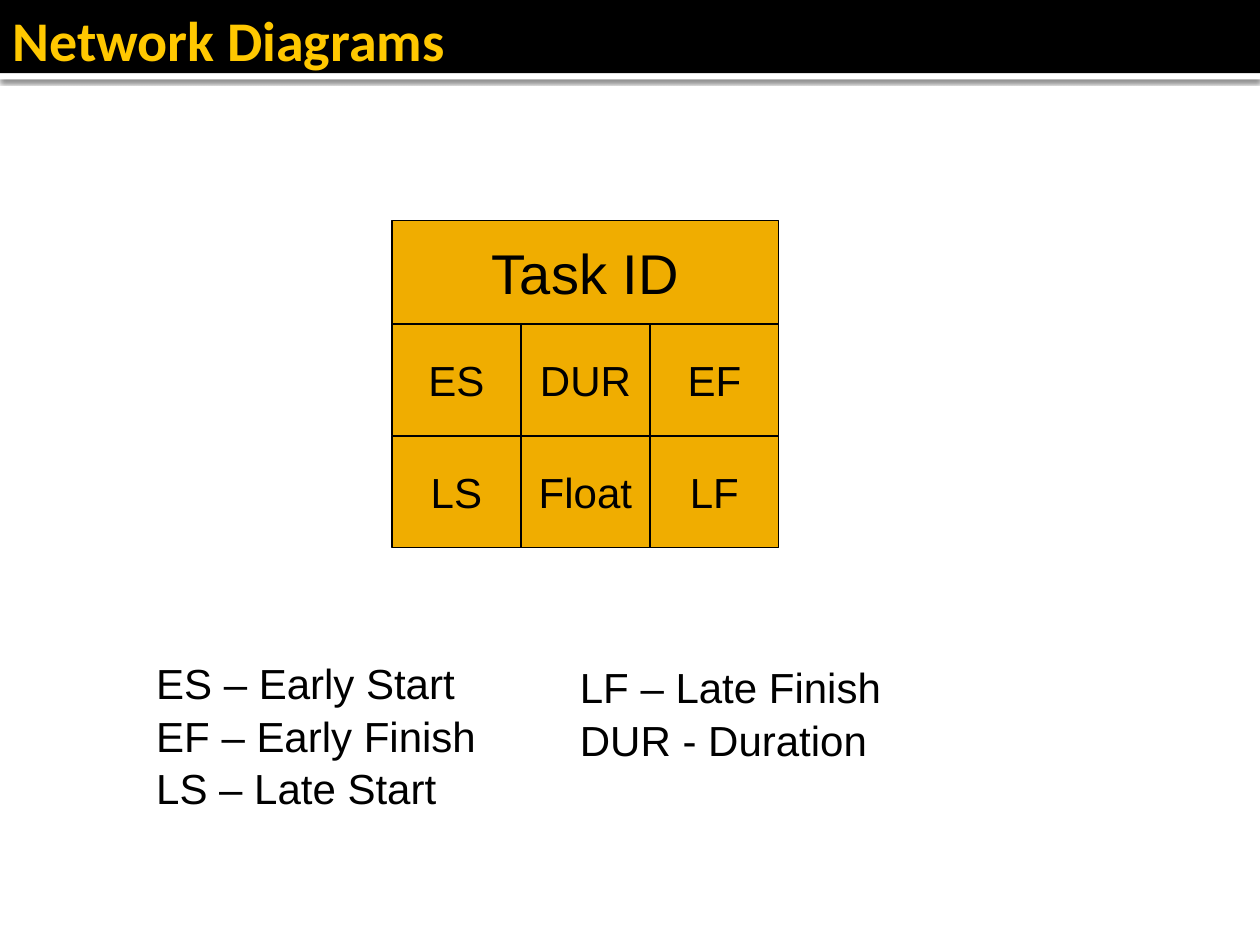
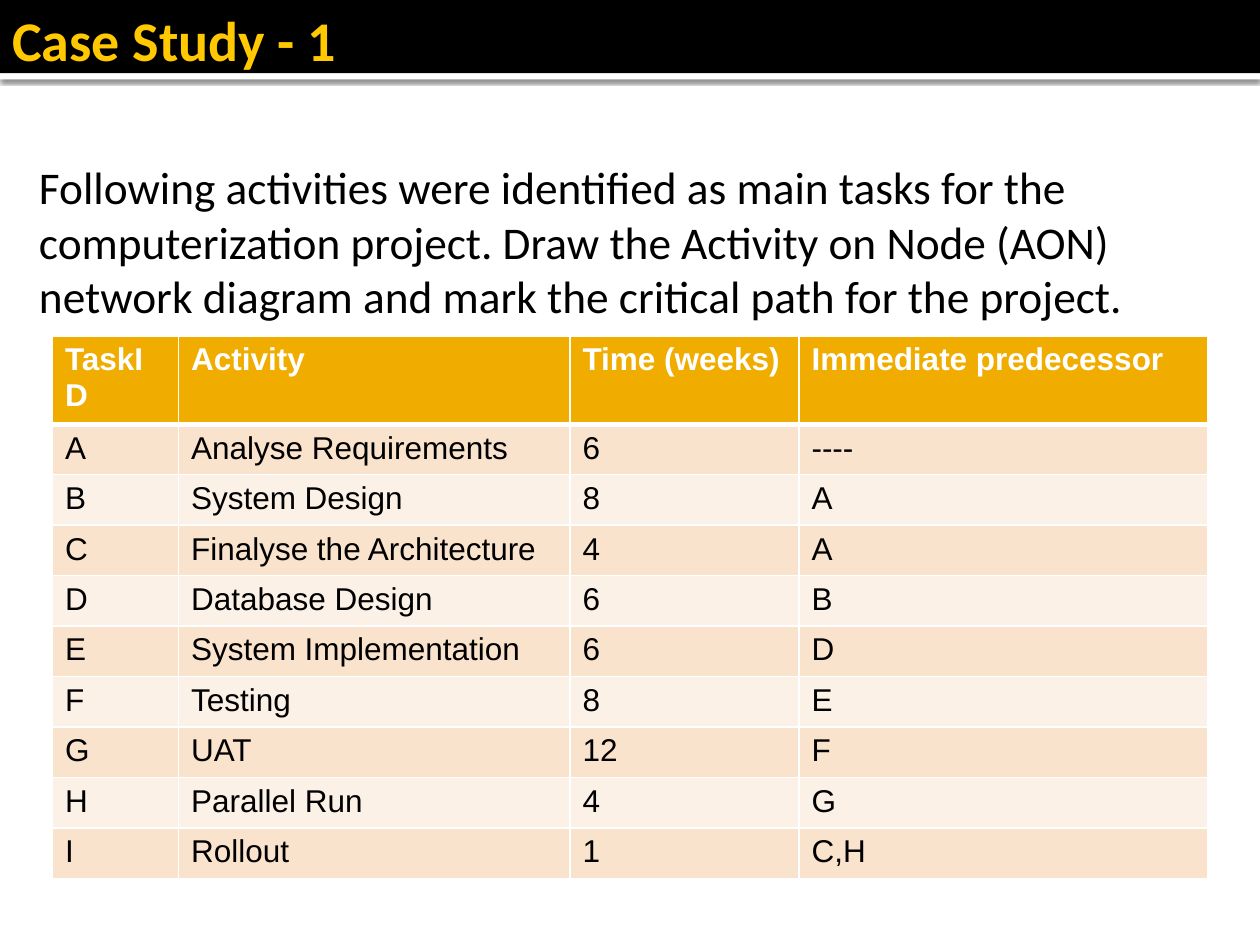
from lxml.etree import SubElement
from pptx import Presentation
from pptx.dml.color import RGBColor
from pptx.enum.shapes import MSO_SHAPE
from pptx.enum.text import MSO_ANCHOR, PP_ALIGN
from pptx.oxml.ns import qn
from pptx.util import Pt

COLOURS = {
    "black": "000000",
    "white": "FFFFFF",
    "title": "FFC800",
    "amber": "F0AD00",
    "band_dark": "F9E3CC",
    "band_light": "FCF1E7",
}
SLIDE_WIDTH, SLIDE_HEIGHT = 720, 540
BAR_HEIGHT = 41.8
LEGEND_MARGINS = (2.88, 2.88, 2.88, 2.88)
TASKS = [
    ("TaskID", "Activity", "Time (weeks)", "Immediate predecessor"),
    ("A", "Analyse Requirements", "6", "----"),
    ("B", "System Design", "8", "A"),
    ("C", "Finalyse the Architecture", "4", "A"),
    ("D", "Database Design", "6", "B"),
    ("E", "System Implementation", "6", "D"),
    ("F", "Testing", "8", "E"),
    ("G", "UAT", "12", "F"),
    ("H", "Parallel Run", "4", "G"),
    ("I", "Rollout", "1", "C,H"),
]


def colour(name):
    """Return the named colour."""
    return RGBColor.from_string(COLOURS[name])


def set_font(paragraph, size, name="Arial", colour_name="black", bold=False):
    """Set the font of a whole paragraph."""
    font = paragraph.font
    font.name, font.size, font.bold = name, Pt(size), bold
    font.color.rgb = colour(colour_name)


def add_rectangle(slide, left, top, width, height, fill):
    """Add a plain filled rectangle without outline or shadow."""
    shape = slide.shapes.add_shape(
        MSO_SHAPE.RECTANGLE, Pt(left), Pt(top), Pt(width), Pt(height))
    shape.shadow.inherit = False
    shape.fill.solid()
    shape.fill.fore_color.rgb = colour(fill)
    shape.line.fill.background()
    return shape


def add_drop_shadow(shape):
    """Give a shape a soft shadow straight below it."""
    effects = shape.element.spPr.find(qn("a:effectLst"))
    shadow = SubElement(effects, qn("a:outerShdw"), blurRad=str(Pt(2.5)),
                        dist=str(Pt(0.8)), dir="5400000", rotWithShape="0")
    shadow_colour = SubElement(shadow, qn("a:srgbClr"), val=COLOURS["black"])
    SubElement(shadow_colour, qn("a:alpha"), val="60000")


def add_text(slide, left, top, width, height, lines, size, margins,
             wrap=True, anchor=MSO_ANCHOR.TOP, spacing=0, **font):
    """Add a text box with one paragraph for each line."""
    box = slide.shapes.add_textbox(Pt(left), Pt(top), Pt(width), Pt(height))
    frame = box.text_frame
    frame.word_wrap = wrap
    frame.vertical_anchor = anchor
    (frame.margin_left, frame.margin_top,
     frame.margin_right, frame.margin_bottom) = map(Pt, margins)
    frame.text = "\n".join(lines)
    for index, paragraph in enumerate(frame.paragraphs):
        set_font(paragraph, size, **font)
        if index and spacing:
            paragraph.space_before = Pt(spacing)


def add_titled_slide(presentation, title):
    """Add a blank slide with the title bar and its title."""
    slide = presentation.slides.add_slide(presentation.slide_layouts[6])
    add_drop_shadow(
        add_rectangle(slide, 0, BAR_HEIGHT, SLIDE_WIDTH, 3.6, "white"))
    add_rectangle(slide, 0, 0, SLIDE_WIDTH, BAR_HEIGHT, "black")
    add_text(slide, 0, 0, SLIDE_WIDTH, 45, [title], 32, (7.2, 3.6, 3.6, 3.6),
             anchor=MSO_ANCHOR.MIDDLE, name="Calibri", colour_name="title",
             bold=True)
    return slide


def add_node_cell(slide, left, top, width, height, label, size):
    """Add one outlined cell of the network node."""
    cell = add_rectangle(slide, left, top, width, height, "amber")
    cell.line.color.rgb = colour("black")
    cell.line.width = Pt(0.75)
    frame = cell.text_frame
    frame.word_wrap = False
    frame.vertical_anchor = MSO_ANCHOR.MIDDLE
    frame.text = label
    paragraph = frame.paragraphs[0]
    paragraph.alignment = PP_ALIGN.CENTER
    set_font(paragraph, size)


def add_network_node(slide, left, top):
    """Add the node: a task header above a grid of its values."""
    width, height, header_height = 73.7, 63.9, 59.2
    for row, labels in enumerate([("ES", "DUR", "EF"), ("LS", "Float", "LF")]):
        for column, label in enumerate(labels):
            add_node_cell(slide, left + column * width,
                          top + header_height + row * height,
                          width, height, label, 24)
    add_node_cell(slide, left, top, 3 * width, header_height, "Task ID", 32)


def add_cell_borders(cell, top=1, bottom=1):
    """Draw white borders on the four sides of a table cell."""
    properties = cell._tc.get_or_add_tcPr()
    for side, width in (("L", 1), ("R", 1), ("T", top), ("B", bottom)):
        line = SubElement(properties, qn("a:ln" + side), w=str(Pt(width)))
        fill = SubElement(line, qn("a:solidFill"))
        SubElement(fill, qn("a:srgbClr"), val=COLOURS["white"])


def add_task_table(slide, left, top):
    """Add the banded table of tasks."""
    widths = (72, 223.7, 130.9, 233.4)
    heights = [50.4] + [28.8] * (len(TASKS) - 1)
    table = slide.shapes.add_table(
        len(TASKS), len(widths), Pt(left), Pt(top),
        Pt(sum(widths)), Pt(sum(heights))).table
    for column, width in zip(table.columns, widths):
        column.width = Pt(width)
    for index, (row, height, values) in enumerate(
            zip(table.rows, heights, TASKS)):
        row.height = Pt(height)
        header = index == 0
        band = "amber" if header else ("band_light", "band_dark")[index % 2]
        for cell, value in zip(row.cells, values):
            add_cell_borders(cell, top=3 if index == 1 else 1,
                             bottom=3 if header else 1)
            cell.fill.solid()
            cell.fill.fore_color.rgb = colour(band)
            cell.text = value
            set_font(cell.text_frame.paragraphs[0], 18,
                     colour_name="white" if header else "black", bold=header)


def add_network_slide(presentation):
    """Build the slide that explains a network node."""
    slide = add_titled_slide(presentation, "Network Diagrams")
    add_network_node(slide, 224, 126)
    add_text(slide, 86.4, 373, 199.4, 92.2,
             ["ES – Early Start", "EF – Early Finish", "LS – Late Start"],
             24, LEGEND_MARGINS, wrap=False, spacing=1.2)
    add_text(slide, 328.5, 375.3, 360, 63.4,
             ["LF – Late Finish", "DUR - Duration"],
             24, LEGEND_MARGINS, spacing=1.2)


def add_case_slide(presentation):
    """Build the case study slide."""
    slide = add_titled_slide(presentation, "Case Study - 1")
    add_text(slide, 18, 84, 684, 96,
             ["Following activities were identified as main tasks for the "
              "computerization project. Draw the Activity on Node (AON) "
              "network diagram and mark the critical path for the project."],
             25.9, (4.3, 7.2, 7.2, 3.6), name="Calibri")
    add_task_table(slide, 30, 192)


def main():
    """Build and save the presentation."""
    presentation = Presentation()
    presentation.slide_width = Pt(SLIDE_WIDTH)
    presentation.slide_height = Pt(SLIDE_HEIGHT)
    add_network_slide(presentation)
    add_case_slide(presentation)
    presentation.save("out.pptx")


if __name__ == "__main__":
    main()
